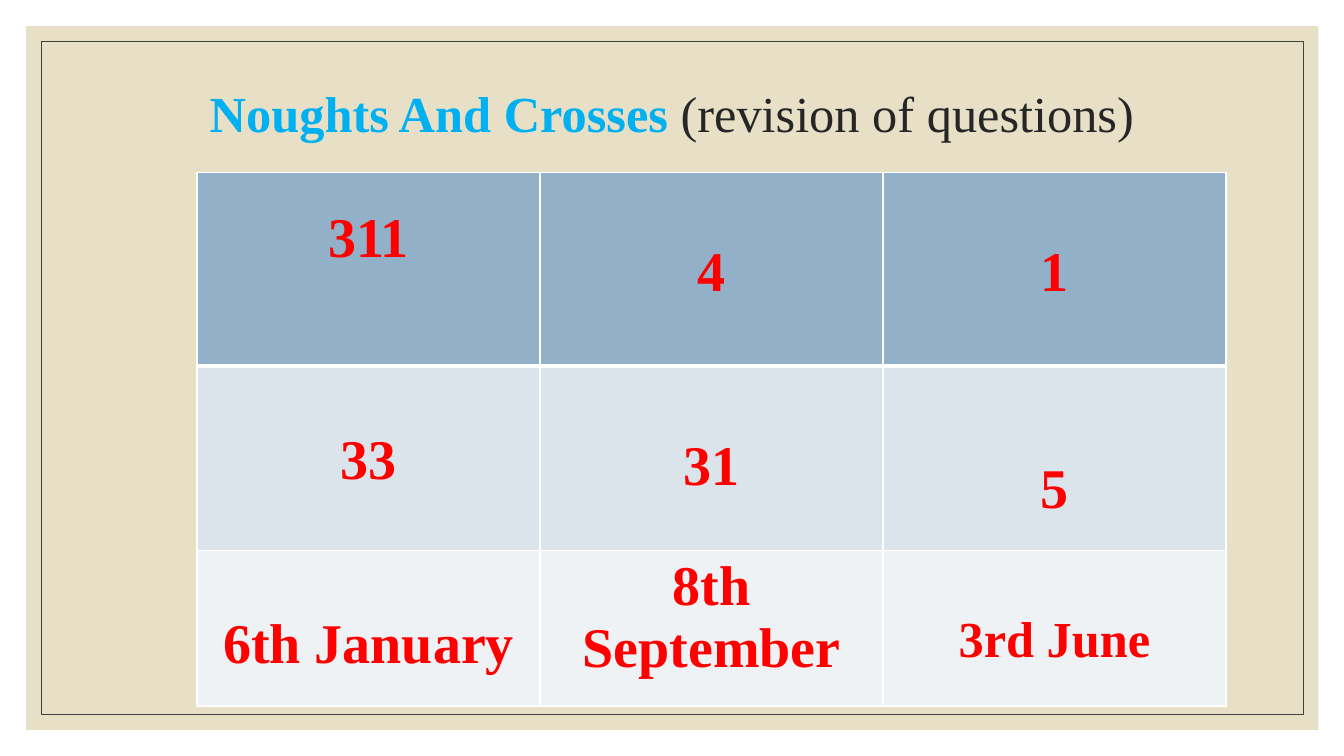
from lxml.etree import SubElement
from pptx import Presentation
from pptx.dml.color import RGBColor as RGB
from pptx.enum.shapes import MSO_SHAPE as Shape
from pptx.enum.text import MSO_ANCHOR as Anchor, PP_ALIGN as Align
from pptx.oxml.ns import qn
from pptx.util import Pt

COLOURS = {
    "sand": "E7E0C7", "frame": "404040", "cyan": "00B0F0", "ink": "262626",
    "red": "FF0000", "white": "FFFFFF",
    "header": "92B0C8", "middle": "DCE4EB", "bottom": "EEF2F5",
}
FONT = "Times New Roman"

# Each row: height, fill, then (answer, gap above it, text size) per cell
ROWS = [
    (138.6, "header", [("311", 21.7, 40), ("4", 46, 40), ("1", 46, 40)]),
    (131.4, "middle", [("33", 41.4, 40), ("31", 46, 40), ("5", 62.1, 40)]),
    (111.4, "bottom", [("6th January", 41.4, 40), ("8th September", 0, 40),
                       ("3rd June", 41.4, 36)]),
]


def colour(key):
    return RGB.from_string(COLOURS[key])


def add_text(paragraph, text, ink, **formats):
    run = paragraph.add_run()
    run.text = text
    for name, value in {"name": FONT, **formats}.items():
        setattr(run.font, name, value)
    run.font.color.rgb = colour(ink)


def add_backdrop(slide, left, top, width, height):
    inset = 10.8
    panel = slide.shapes.add_shape(
        Shape.RECTANGLE, Pt(left), Pt(top), Pt(width), Pt(height))
    frame = slide.shapes.add_shape(
        Shape.RECTANGLE, Pt(left + inset), Pt(top + inset),
        Pt(width - 2 * inset), Pt(height - 2 * inset))
    panel.shadow.inherit = frame.shadow.inherit = False
    panel.fill.solid()
    panel.fill.fore_color.rgb = colour("sand")
    panel.line.fill.background()
    frame.fill.background()
    frame.line.color.rgb = colour("frame")
    frame.line.width = Pt(0.5)


def add_title(slide, left, top, width, height):
    title = slide.shapes.add_textbox(
        Pt(left), Pt(top), Pt(width), Pt(height)).text_frame
    for name, value in {"word_wrap": True, "margin_top": Pt(8.2),
                        "vertical_anchor": Anchor.TOP}.items():
        setattr(title, name, value)
    heading = title.paragraphs[0]
    heading.alignment = Align.CENTER
    add_text(heading, "Noughts And Crosses ", "cyan", size=Pt(36), bold=True)
    add_text(heading, "(revision of questions)", "ink", size=Pt(36), bold=False)


def add_borders(cell, widths):
    properties = cell._tc.get_or_add_tcPr()
    for side, width in widths.items():
        line = SubElement(properties, qn(f"a:ln{side}"), w=str(Pt(width)))
        fill = SubElement(line, qn("a:solidFill"))
        SubElement(fill, qn("a:srgbClr"), val=COLOURS["white"])


def add_board(slide, left, top, width):
    height = sum(row[0] for row in ROWS)
    board = slide.shapes.add_table(
        len(ROWS), 3, Pt(left), Pt(top), Pt(width), Pt(height)).table
    board.first_row = board.horz_banding = False
    for column in board.columns:
        column.width = Pt(width / 3)
    for r, (row_height, fill, answers) in enumerate(ROWS):
        board.rows[r].height = Pt(row_height)
        for c, (answer, gap, size) in enumerate(answers):
            cell = board.cell(r, c)
            # The rule under the first row is heavier
            add_borders(cell, {"L": 1, "R": 1, "T": 3 if r == 1 else 1,
                               "B": 3 if r == 0 else 1})
            cell.fill.solid()
            cell.fill.fore_color.rgb = colour(fill)
            cell.margin_top = Pt(3.6 + gap)
            paragraph = cell.text_frame.paragraphs[0]
            paragraph.alignment = Align.CENTER
            add_text(paragraph, answer, "red", size=Pt(size), bold=True)


def main():
    deck = Presentation()
    deck.slide_width, deck.slide_height = Pt(960), Pt(540)
    slide = deck.slides.add_slide(deck.slide_layouts[6])
    add_backdrop(slide, 18.7, 18.7, 923, 502.6)
    add_title(slide, 84, 50.4, 792, 108)
    add_board(slide, 140.7, 123, 735)
    deck.save("out.pptx")


if __name__ == "__main__":
    main()
